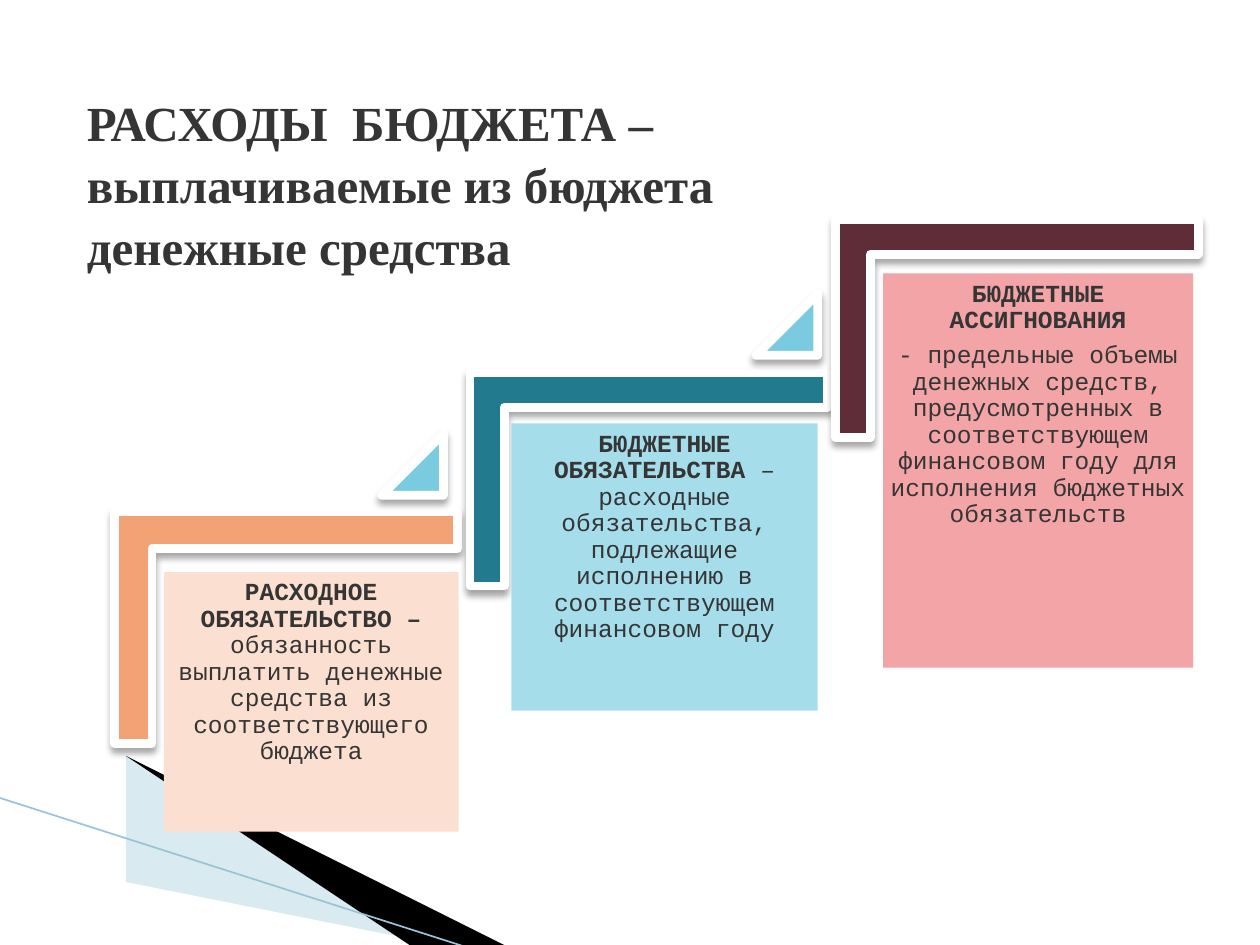
"""Builds a slide that explains budget expenditure as three rising steps."""
from lxml.etree import SubElement
from pptx import Presentation
from pptx.dml.color import RGBColor
from pptx.enum.shapes import MSO_CONNECTOR, MSO_SHAPE as Shape
from pptx.enum.text import MSO_ANCHOR, MSO_AUTO_SIZE, PP_ALIGN
from pptx.oxml.ns import qn
from pptx.util import Inches, Pt

INK = RGBColor(0x35, 0x35, 0x35)
WHITE = RGBColor(0xFF, 0xFF, 0xFF)
BLACK = RGBColor(0, 0, 0)
ARROW = RGBColor(0x7A, 0xCB, 0xE0)
SWOOSH = RGBColor(0xA0, 0xCB, 0xDC)
EDGE = RGBColor(0x97, 0xC5, 0xD8)
ORANGE, PEACH = RGBColor(0xF3, 0xA2, 0x76), RGBColor(0xFB, 0xE0, 0xD1)
TEAL, AQUA = RGBColor(0x22, 0x7A, 0x8F), RGBColor(0xA6, 0xDD, 0xEA)
WINE, PINK = RGBColor(0x5E, 0x2D, 0x37), RGBColor(0xF2, 0xA4, 0xA7)

TITLE = ["РАСХОДЫ  БЮДЖЕТА –", "выплачиваемые из бюджета", "денежные средства"]
STEPS = [
    {"bracket": (0.91, 4.06, 2.72, 1.84), "panel": (1.3, 4.54, 2.34, 2.06),
     "colours": (ORANGE, PEACH), "arrow": (3.03, 3.44),
     "text": [[("РАСХОДНОЕ ОБЯЗАТЕЛЬСТВО – ", True),
               ("обязанность выплатить денежные средства из соответствующего бюджета", False)]]},
    {"bracket": (3.73, 2.96, 2.84, 1.69), "panel": (4.06, 3.36, 2.43, 2.28),
     "colours": (TEAL, AQUA), "arrow": (6, 2.33),
     "text": [[("БЮДЖЕТНЫЕ ОБЯЗАТЕЛЬСТВА ", True),
               ("– расходные обязательства, подлежащие исполнению в "
                "соответствующем финансовом году", False)]]},
    {"bracket": (6.63, 1.74, 2.88, 1.73), "panel": (7.01, 2.17, 2.46, 3.13),
     "colours": (WINE, PINK), "arrow": None,
     "text": [[("БЮДЖЕТНЫЕ АССИГНОВАНИЯ", True)],
              [("- предельные объемы денежных средств, предусмотренных в соответствующем "
                "финансовом году для исполнения бюджетных обязательств", False)]]},
]
SWEEPS = [
    ([(0.55, 6.51), (5.95, 7.51), (4.56, 7.51), (0.55, 6.5)], SWOOSH, 40),
    ([(0.53, 6.49), (4.57, 7.51), (3.72, 7.52), (0.54, 6.5)], BLACK, 100),
]
ARROW_SIZE = 0.49
THICKNESS = 0.161


def paint(shape, colour, opacity=100):
    shape.shadow.inherit = False
    shape.fill.solid()
    shape.fill.fore_color.rgb = colour
    shape.line.fill.background()
    if opacity < 100:
        tint = shape._element.spPr.find(f"{qn('a:solidFill')}/{qn('a:srgbClr')}")
        SubElement(tint, qn("a:alpha"), val=str(opacity * 1000))


def raise_up(shape, colour):
    paint(shape, colour)
    shape.line.color.rgb = WHITE
    shape.line.width = Pt(5)
    effects = shape._element.spPr.find(qn("a:effectLst"))
    shadow = SubElement(effects, qn("a:outerShdw"), blurRad=str(Pt(4)), dist=str(Pt(3)),
                        dir="5400000", rotWithShape="0")
    tint = SubElement(shadow, qn("a:srgbClr"), val="000000")
    SubElement(tint, qn("a:alpha"), val="35000")


def add_preset(shapes, preset, *box):
    return shapes.add_shape(preset, *map(Inches, box))


def add_decor(shapes):
    for points, colour, opacity in SWEEPS:
        builder = shapes.build_freeform(*points[0], scale=Inches(1))
        builder.add_line_segments(points[1:], close=True)
        paint(builder.convert_to_shape(), colour, opacity)
    edge = shapes.add_connector(MSO_CONNECTOR.STRAIGHT,
                                *map(Inches, (-0.01, 6.33, 3.71, 7.52)))
    edge.line.color.rgb = EDGE
    edge.line.width = Pt(0.95)
    SubElement(edge._element.spPr, qn("a:effectLst"))


def style(font, name, size):
    font.name, font.size, font.color.rgb = name, Pt(size), INK


def set_title(title):
    title.left, title.top, title.width, title.height = map(Inches, (0.59, 0.7, 5.2, 1.5))
    frame = title.text_frame
    frame.auto_size = MSO_AUTO_SIZE.NONE
    frame.word_wrap = True
    frame.vertical_anchor = MSO_ANCHOR.MIDDLE
    frame.text = "\n".join(TITLE)
    for line in frame.paragraphs:
        line.alignment = PP_ALIGN.LEFT
        line.line_spacing = 1.05
        style(line.font, "Times New Roman", 28)
        line.font.bold = True


def add_panel(shapes, box, colour, text):
    panel = add_preset(shapes, Shape.RECTANGLE, *box)
    paint(panel, colour)
    frame = panel.text_frame
    frame.word_wrap = True
    frame.vertical_anchor = MSO_ANCHOR.TOP
    frame.margin_left = frame.margin_right = Inches(0.06)
    frame.margin_top = frame.margin_bottom = Inches(0.06)
    for index, parts in enumerate(text):
        paragraph = frame.add_paragraph() if index else frame.paragraphs[0]
        paragraph.alignment = PP_ALIGN.CENTER
        paragraph.line_spacing = 0.9
        paragraph.space_after = Pt(4.9)
        style(paragraph.font, "Courier New", 14)
        for words, bold in parts:
            run = paragraph.add_run()
            run.text = words
            run.font.bold = bold


def add_step(shapes, step):
    left, top, width, height = step["bracket"]
    strong, pale = step["colours"]
    shift = (width - height) / 2
    bracket = add_preset(shapes, Shape.CORNER, left + shift, top - shift, height, width)
    bracket.rotation = 90
    bracket.adjustments[0] = bracket.adjustments[1] = THICKNESS
    raise_up(bracket, strong)
    add_panel(shapes, step["panel"], pale, step["text"])
    if step["arrow"]:
        arrow = add_preset(shapes, Shape.ISOSCELES_TRIANGLE, *step["arrow"],
                           ARROW_SIZE, ARROW_SIZE)
        arrow.adjustments[0] = 1
        raise_up(arrow, ARROW)


def main():
    deck = Presentation()
    deck.slide_width, deck.slide_height = Inches(10), Inches(7.5)
    shapes = deck.slides.add_slide(deck.slide_layouts[5]).shapes
    add_decor(shapes)
    set_title(shapes.title)
    for step in STEPS:
        add_step(shapes, step)
    deck.save("out.pptx")


if __name__ == "__main__":
    main()
